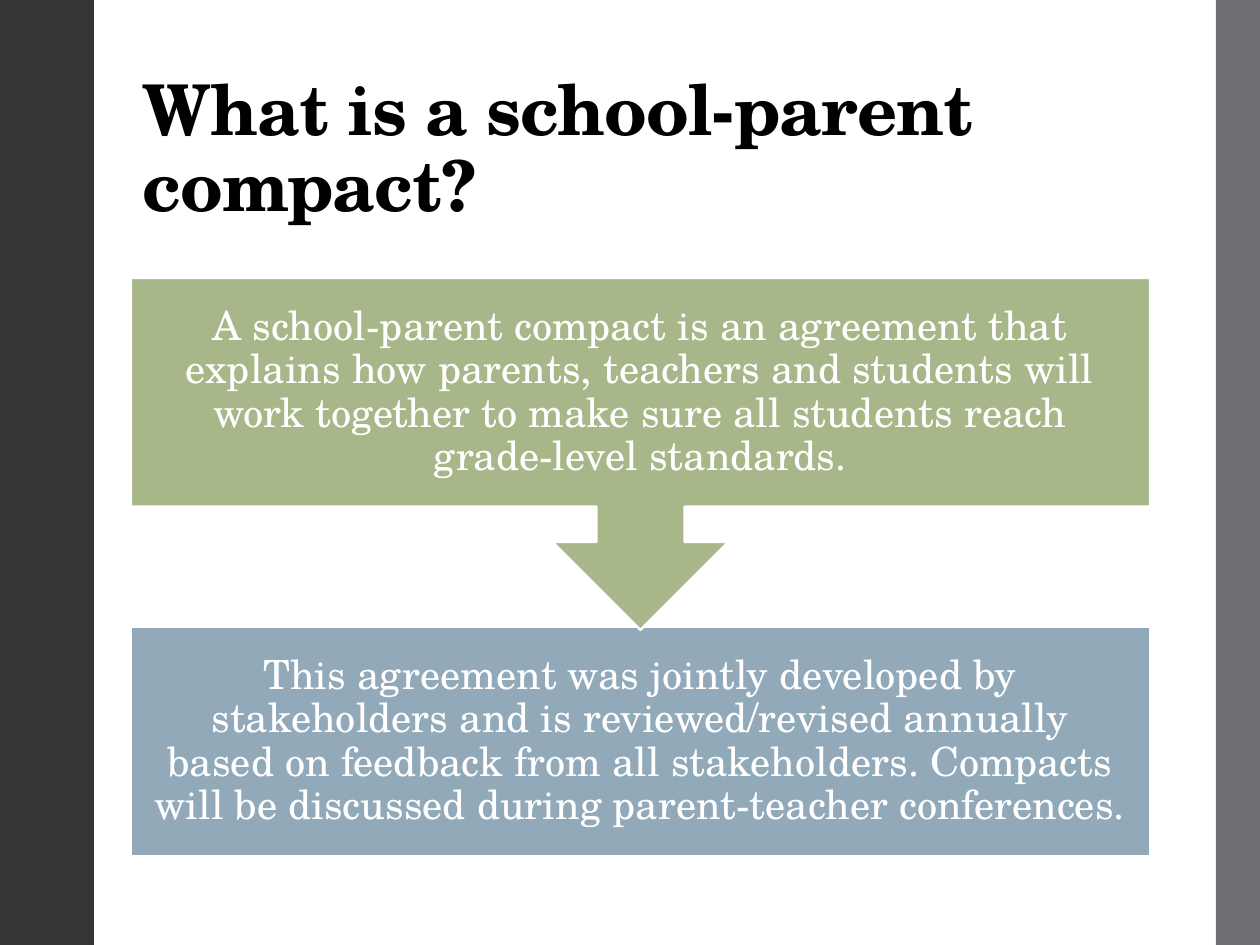
from pptx import Presentation
from pptx.dml.color import RGBColor
from pptx.enum.shapes import MSO_SHAPE
from pptx.enum.text import MSO_ANCHOR, MSO_AUTO_SIZE, PP_ALIGN
from pptx.util import Pt

PX = 914400 / 126
SLIDE = (1260, 945)


class Theme:
    font = "TeX Gyre Schola"
    title_size, body_size = 40, 23
    line_spacing = 0.9
    black, white = "000000", "FFFFFF"
    dark, gray = "353537", "6F6F74"
    green, blue = "A7B789", "92A9B9"
    outline = 1.35


TITLE = "What is a school-parent compact?"
TITLE_BOX = (130, 50, 1019, 183)

# left, width, colour
SIDE_BARS = [(0, 94, Theme.dark), (1216, 44, Theme.gray)]

STEPS_LEFT, STEPS_WIDTH = 131, 1019
# preset, top, height, colour, text; from back to front
STEPS = [
    (MSO_SHAPE.RECTANGLE, 627, 229, Theme.blue,
     "This agreement was jointly developed by stakeholders and is "
     "reviewed/revised annually based on feedback from all stakeholders. "
     "Compacts will be discussed during parent-teacher conferences."),
    (MSO_SHAPE.DOWN_ARROW_CALLOUT, 278, 352, Theme.green,
     "A school-parent compact is an agreement that explains how parents, "
     "teachers and students will work together to make sure all students "
     "reach grade-level standards."),
]
STEP_INSET = 23


def emu(*lengths):
    return [round(n * PX) for n in lengths]


def color(value):
    return RGBColor.from_string(value)


def add_block(s, preset, box, fill):
    sp = s.shapes.add_shape(preset, *emu(*box))
    sp.shadow.inherit = False
    sp.fill.solid()
    sp.fill.fore_color.rgb = color(fill)
    sp.line.fill.background()
    return sp


def write(tf, text, size, ink, align, anchor, bold=False):
    tf.word_wrap = True
    tf.auto_size = MSO_AUTO_SIZE.NONE
    tf.vertical_anchor = anchor
    p = tf.paragraphs[0]
    p.alignment = align
    p.line_spacing = Theme.line_spacing
    r = p.add_run()
    r.text = text
    r.font.name = Theme.font
    r.font.size = Pt(size)
    r.font.bold = bold
    r.font.color.rgb = color(ink)
    return r


def add_title(s):
    sp = s.shapes.title
    sp.left, sp.top, sp.width, sp.height = emu(*TITLE_BOX)
    r = write(sp.text_frame, TITLE, Theme.title_size, Theme.black,
              PP_ALIGN.LEFT, MSO_ANCHOR.BOTTOM, bold=True)
    r.font._element.set("spc", "-50")


def add_step(s, preset, top, height, fill, text):
    sp = add_block(s, preset, (STEPS_LEFT, top, STEPS_WIDTH, height), fill)
    sp.line.color.rgb = color(Theme.white)
    sp.line.width = Pt(Theme.outline)
    tf = sp.text_frame
    inset, = emu(STEP_INSET)
    tf.margin_left = tf.margin_right = tf.margin_top = tf.margin_bottom = inset
    write(tf, text, Theme.body_size, Theme.white,
          PP_ALIGN.CENTER, MSO_ANCHOR.MIDDLE)


def main():
    prs = Presentation()
    prs.slide_width, prs.slide_height = emu(*SLIDE)
    s = prs.slides.add_slide(prs.slide_layouts[5])
    s.background.fill.solid()
    s.background.fill.fore_color.rgb = color(Theme.white)
    add_title(s)
    for left, width, fill in SIDE_BARS:
        add_block(s, MSO_SHAPE.RECTANGLE, (left, 0, width, SLIDE[1]), fill)
    for step in STEPS:
        add_step(s, *step)
    prs.save("out.pptx")


if __name__ == "__main__":
    main()
